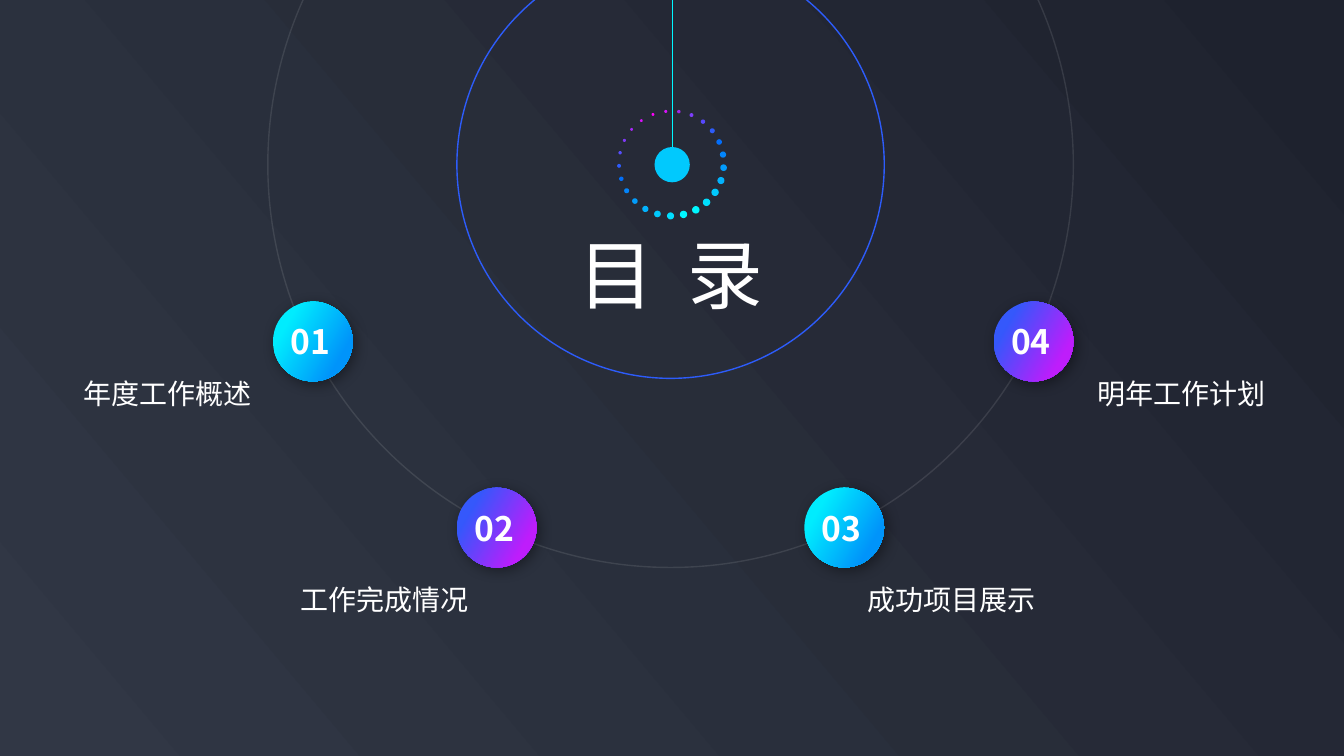
from math import cos, pi, radians, sin

from lxml import etree
from pptx import Presentation
from pptx.dml.color import RGBColor
from pptx.enum.shapes import MSO_CONNECTOR, MSO_SHAPE
from pptx.enum.text import MSO_ANCHOR, MSO_AUTO_SIZE, PP_ALIGN
from pptx.oxml.ns import qn
from pptx.util import Cm, Pt

OVAL = MSO_SHAPE.OVAL
STRAIGHT = MSO_CONNECTOR.STRAIGHT
MIDDLE = MSO_ANCHOR.MIDDLE
NO_FIT = MSO_AUTO_SIZE.NONE
LEFT = PP_ALIGN.LEFT

FONT = "Noto Sans CJK SC"
WHITE = RGBColor(0xFF, 0xFF, 0xFF)
BLUE = RGBColor(0x2D, 0x5C, 0xFA)
SKY = RGBColor(0x01, 0xC9, 0xFD)
CYAN = RGBColor(0x00, 0xF7, 0xFF)
BG_LIGHT = RGBColor(0x31, 0x37, 0x45)
BG_DARK = RGBColor(0x1E, 0x22, 0x2E)
CYAN_BLUE = (RGBColor(0x00, 0xEC, 0xFE), RGBColor(0x00, 0x94, 0xFA))
BLUE_PURPLE = (RGBColor(0x35, 0x58, 0xFB), RGBColor(0xBE, 0x1D, 0xFB))
DOT_COLORS = [RGBColor.from_string(c) for c in (
    "01DEFF 00F7FF 00F7FF 00DFFE 01C9FD 02B2FD 029CFD 0285FB 036EFA "
    "2D5CFA 5748FD 7D3EFC 9F26E7 D813FB FC02F9 D912FC AA27FB 7F39F6 "
    "564EFC 2E5CFB 026FF9 0384FB 029CFB 02B2FD 01C9FD").split()]

ITEMS = [
    ("01", "年度工作概述", (6.88, 7.6), (1.85, 9.35), CYAN_BLUE),
    ("02", "工作完成情况", (11.51, 12.29), (7.32, 14.55), BLUE_PURPLE),
    ("03", "成功项目展示", (20.27, 12.29), (21.62, 14.55), CYAN_BLUE),
    ("04", "明年工作计划", (25.04, 7.6), (27.41, 9.35), BLUE_PURPLE),
]


def set_gradient(fill, colors, positions, angle):
    fill.gradient()
    fill.gradient_angle = 360 - angle
    for stop, color, position in zip(fill.gradient_stops, colors, positions):
        stop.color.rgb = color
        stop.position = position


def add_run(tf, text, size, bold=False):
    tf.auto_size = NO_FIT
    tf.vertical_anchor = MIDDLE
    p = tf.paragraphs[0]
    p.alignment = LEFT
    r = p.add_run()
    r.text = text
    r.font.size = Pt(size)
    r.font.bold = bold
    r.font.color.rgb = WHITE
    r.font.name = FONT
    etree.SubElement(r.font._element, qn("a:ea"), typeface=FONT)
    return r


def add_circle(s, cx, cy, diameter):
    sp = s.shapes.add_shape(OVAL, Cm(cx - diameter / 2), Cm(cy - diameter / 2),
                            Cm(diameter), Cm(diameter))
    sp.shadow.inherit = False
    return sp


def add_orbit(s, cx, cy, diameter, color, opacity=100):
    sp = add_circle(s, cx, cy, diameter)
    sp.fill.background()
    sp.line.color.rgb = color
    sp.line.width = Pt(1)
    if opacity < 100:
        clr = sp.line._ln.find(".//" + qn("a:srgbClr"))
        etree.SubElement(clr, qn("a:alpha"), val=str(opacity * 1000))


def add_disc(s, cx, cy, diameter, color):
    sp = add_circle(s, cx, cy, diameter)
    sp.fill.solid()
    sp.fill.fore_color.rgb = color
    sp.line.fill.background()


def add_pendulum(s, cx, cy):
    diameter = 0.89
    cord = s.shapes.add_connector(STRAIGHT, Cm(cx), 0, Cm(cx), Cm(cy - diameter / 2))
    cord.line.color.rgb = CYAN
    cord.line.width = Pt(0.5)
    etree.SubElement(cord._element.spPr, qn("a:effectLst"))
    add_disc(s, cx, cy, diameter, SKY)


def add_dot_ring(s, cx, cy, radius):
    count = len(DOT_COLORS)
    for i, color in enumerate(DOT_COLORS):
        angle = radians(91 - 360 / count * i)
        diameter = 0.13 + 0.06 * cos(2 * pi * (i - 2.5) / count)
        add_disc(s, cx + radius * cos(angle), cy + radius * sin(angle), diameter, color)


def add_title(s, left, top, width, height):
    title = s.shapes.title
    title.left, title.top = Cm(left), Cm(top)
    title.width, title.height = Cm(width), Cm(height)
    tf = title.text_frame
    tf.word_wrap = False
    r = add_run(tf, "目 录", 54)
    r.font._element.set("spc", "600")


def add_badge(s, left, top, number, colors):
    diameter = 2.01
    sp = add_circle(s, left + diameter / 2, top + diameter / 2, diameter)
    set_gradient(sp.fill, colors, (0.21, 0.8), 30)
    sp.line.fill.background()
    effects = sp._element.spPr.find(qn("a:effectLst"))
    shadow = etree.SubElement(effects, qn("a:outerShdw"), blurRad=str(Pt(10)),
                              dist=str(Pt(3)), dir=str(45 * 60000),
                              algn="tl", rotWithShape="0")
    clr = etree.SubElement(shadow, qn("a:srgbClr"), val="000000")
    etree.SubElement(clr, qn("a:alpha"), val="40000")
    tf = sp.text_frame
    tf.word_wrap = True
    tf.margin_left = Cm(0.15)
    tf.margin_right = tf.margin_top = tf.margin_bottom = 0
    add_run(tf, number, 24, bold=True)


def add_label(s, left, top, text):
    tb = s.shapes.add_textbox(Cm(left), Cm(top), Cm(4.78), Cm(1.12))
    tb.text_frame.word_wrap = False
    add_run(tb.text_frame, text, 20)


def build_contents_slide(prs):
    s = prs.slides.add_slide(prs.slide_layouts[5])
    set_gradient(s.background.fill, (BG_LIGHT, BG_DARK), (0, 1), 320)
    cx, cy = 16.92, 4.15
    add_orbit(s, cx - 0.02, cy, 20.3, WHITE, opacity=10)
    add_orbit(s, cx - 0.02, cy, 10.77, BLUE)
    add_pendulum(s, cx + 0.02, cy)
    add_dot_ring(s, cx, cy - 0.03, 1.32)
    add_title(s, 14.33, 5.61, 5.44, 2.57)
    for number, text, badge, label, colors in ITEMS:
        add_badge(s, *badge, number, colors)
        add_label(s, *label, text)


def main():
    prs = Presentation()
    prs.slide_width, prs.slide_height = Cm(33.87), Cm(19.05)
    build_contents_slide(prs)
    prs.save("out.pptx")


if __name__ == "__main__":
    main()
